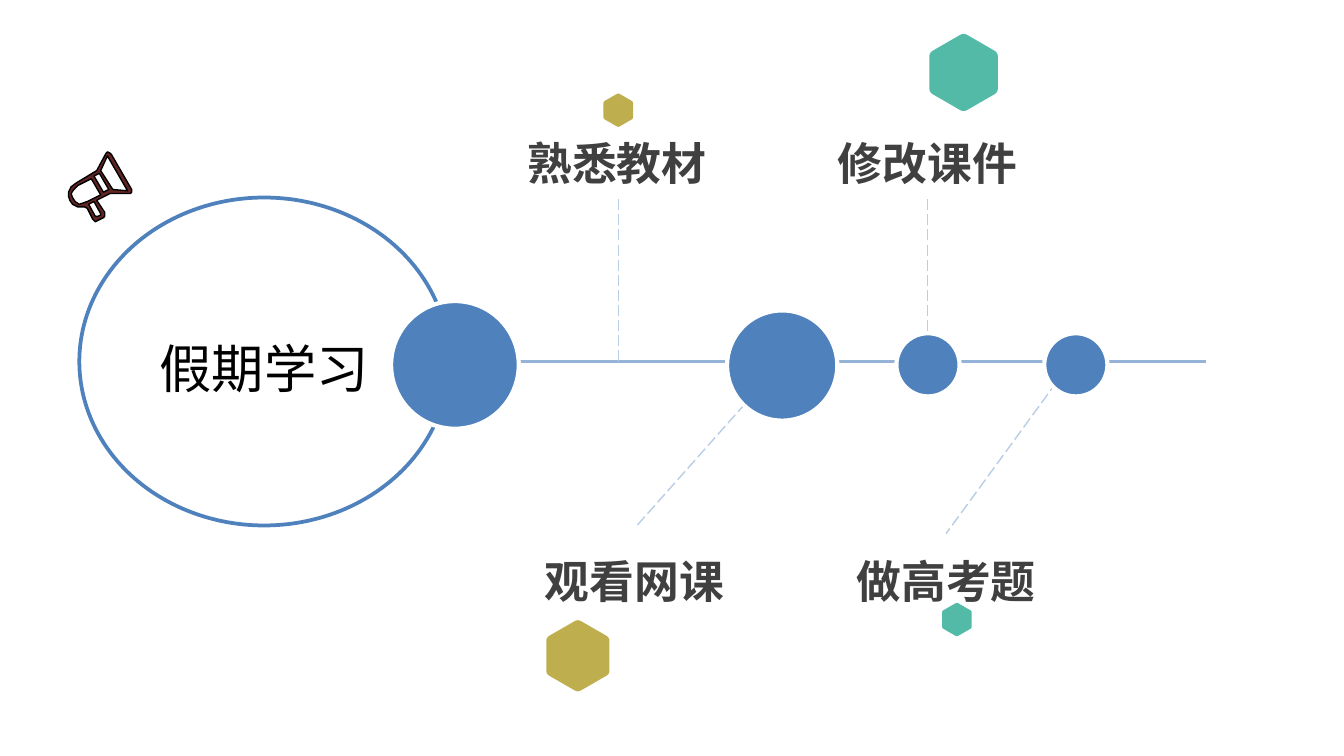
import math
from pptx import Presentation
from pptx import util as u
from pptx.dml.color import RGBColor
from pptx.enum import dml, shapes, text
from pptx.oxml.ns import qn
from lxml import etree

PX = 9144  # 100 px to the inch
WIDE = 1000
COL = {"blue": "4F81BD", "axis": "95B3D7", "dash": "B9CDE5", "white": "FFFFFF",
       "black": "000000", "grey": "404040", "gold": "BEAE4E", "teal": "52BAA6",
       "maroon": "632523"}

HUB = ("假期学习", (59, 147, 275, 244))
AXIS = (384, 269, 897, 269)
LEADS = [(460, 269, 460, 147), (577, 275, 474, 391),
         (793, 275, 704, 397), (690, 269, 690, 147)]
DOTS = [(291, 224, 95), (541, 231, 82), (777, 248, 47), (667, 248, 47)]
TOP, LOW = (24, 117, text.MSO_ANCHOR.BOTTOM), (400, 122, text.MSO_ANCHOR.TOP)
LABELS = [("熟悉教材", 386, TOP), ("修改课件", 617, TOP),
          ("观看网课", 399, LOW), ("做高考题", 631, LOW)]
# centre x, centre y, width, colour
HEXES = [(460, 82, 22, "gold"), (717, 54, 51, "teal"),
         (430, 488, 47, "gold"), (712, 461, 22, "teal")]
# outer edge first, then the holes
HORN = [
    [(79, 114), (80, 113), (82, 114), (83, 115), (98, 141), (98, 143), (97, 144),
     (82, 144), (72, 149), (78, 158), (78, 161), (77, 162), (73, 164), (71, 165),
     (69, 163), (65, 155), (63, 154), (58, 154), (54, 152), (52, 149), (51, 146),
     (51, 143), (53, 139), (57, 136), (72, 127)],
    [(66, 152), (71, 161), (73, 161), (75, 160), (75, 159), (70, 150)],
    [(70, 131), (77, 143), (81, 141), (74, 129)],
    [(58, 138), (55, 141), (53, 144), (54, 147), (56, 150), (59, 152), (62, 151),
     (65, 150), (75, 145), (68, 133)],
    [(80, 116), (75, 127), (84, 141), (95, 142)],
]


def rgb(name):
    return RGBColor.from_string(COL[name])


def px(*vals):
    return [round(v * PX) for v in vals]


def paint(shape, fill=None, line=None, width=0):
    shape.shadow.inherit = False
    if fill:
        shape.fill.solid()
        shape.fill.fore_color.rgb = rgb(fill)
    else:
        shape.fill.background()
    if line:
        shape.line.color.rgb = rgb(line)
        shape.line.width = u.Pt(width)
    else:
        shape.line.fill.background()


def oval(slide, box, **look):
    shape = slide.shapes.add_shape(shapes.MSO_SHAPE.OVAL, *px(*box))
    paint(shape, **look)
    return shape


def link(slide, ends, color, width, dash=None):
    line = slide.shapes.add_connector(shapes.MSO_CONNECTOR.STRAIGHT, *px(*ends))
    line.line.color.rgb = rgb(color)
    line.line.width = u.Pt(width)
    if dash:
        line.line.dash_style = dash
    etree.SubElement(line._element.spPr, qn("a:effectLst"))


def write(shape, words, size, color, bold=False, gap=1.0, anchor=None, inset=None):
    frame = shape.text_frame
    frame.word_wrap = True
    frame.vertical_anchor = anchor
    if inset is not None:
        frame.margin_left = frame.margin_right = inset
        frame.margin_top = frame.margin_bottom = inset
    para = frame.paragraphs[0]
    para.alignment = text.PP_ALIGN.CENTER
    para.line_spacing = gap
    run = para.add_run()
    run.text = words
    run.font.name = "Calibri"
    run.font.size = u.Pt(size)
    run.font.bold = bold
    run.font.color.rgb = rgb(color)


def outline(slide, rings, **look):
    """Draw closed rings of px points as one shape."""
    rings = [[px(*pt) for pt in ring] for ring in rings]
    pen = slide.shapes.build_freeform(*rings[0][0], scale=1.0)
    for i, ring in enumerate(rings):
        if i:
            pen.move_to(*ring[0])
        pen.add_line_segments(ring[1:], close=True)
    paint(pen.convert_to_shape(), **look)


def hexagon(x, y, width, cut=0.1, steps=4):
    """Points of an upright hexagon with rounded corners."""
    rad = width / math.sqrt(3)
    tips = [(x + rad * math.sin(k * math.pi / 3), y - rad * math.cos(k * math.pi / 3))
            for k in range(6)]
    pts = []
    for k, tip in enumerate(tips):
        a, b = [[t + cut * (o - t) for t, o in zip(tip, other)]
                for other in (tips[k - 1], tips[(k + 1) % 6])]
        for s in range(steps + 1):
            f = s / steps
            pts.append([(1 - f) ** 2 * p + 2 * f * (1 - f) * t + f * f * q
                        for p, t, q in zip(a, tip, b)])
    return pts


def main():
    prs = Presentation()
    prs.slide_width, prs.slide_height = px(WIDE, WIDE * 9 / 16)
    slide = prs.slides.add_slide(prs.slide_layouts[6])

    words, box = HUB
    hub = oval(slide, box, line="blue", width=2)
    write(hub, words, 28, "black", gap=1.2, anchor=text.MSO_ANCHOR.MIDDLE)

    link(slide, AXIS, "axis", 2)
    for ends in LEADS:
        link(slide, ends, "dash", 0.75, dml.MSO_LINE.LONG_DASH)
    for x, y, size in DOTS:
        oval(slide, (x, y, size, size), fill="blue", line="white", width=2.25)

    for words, x, (y, height, anchor) in LABELS:
        label = slide.shapes.add_textbox(*px(x, y, 146, height))
        write(label, words, 24, "grey", bold=True, gap=1.3, anchor=anchor, inset=0)

    for x, y, width, color in HEXES:
        outline(slide, [hexagon(x, y, width)], fill=color)
    outline(slide, HORN, fill="maroon", line="black")
    prs.save("out.pptx")


if __name__ == "__main__":
    main()
